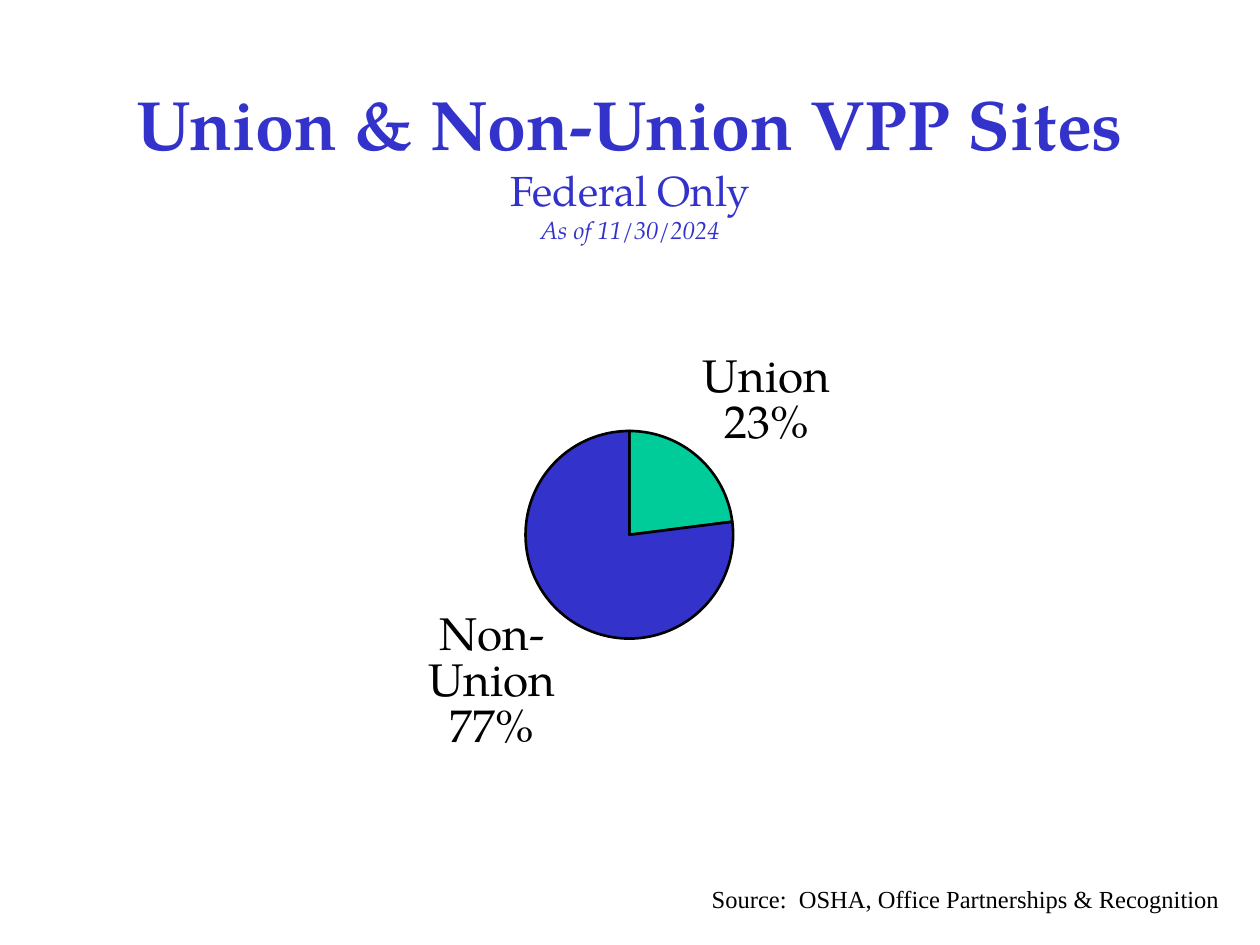
import copy

import pptx
import pptx.chart.data
import pptx.dml.color
import pptx.enum.chart
import pptx.enum.text
import pptx.util

Inches = pptx.util.Inches
Pt = pptx.util.Pt
SERIF = "TeX Gyre Pagella"
BLUE, GREEN, BLACK = "3333CC", "00CC99", "000000"


def color(code):
    return pptx.dml.color.RGBColor.from_string(code)


def style(font, size, name=SERIF, code=BLACK, bold=False, italic=False):
    font.size, font.name = Pt(size), name
    font.bold, font.italic = bold, italic
    font.color.rgb = color(code)


def write(para, text, end=False, **form):
    """Add a run, and a line break of the same format if end is set."""
    run = para.add_run()
    run.text = text
    style(run.font, **form)
    if end:
        para.add_line_break()
        para._p[-1].append(copy.deepcopy(run._r.rPr))


def add_title(slide):
    title = slide.shapes.title
    title.left, title.top = Inches(0.75), Inches(0.58)
    title.width, title.height = Inches(8.5), Inches(1.42)
    frame = title.text_frame
    frame.auto_size = pptx.enum.text.MSO_AUTO_SIZE.NONE
    frame.vertical_anchor = pptx.enum.text.MSO_ANCHOR.MIDDLE
    para = frame.paragraphs[0]
    para.alignment = pptx.enum.text.PP_ALIGN.CENTER
    write(para, "Union & Non-Union VPP Sites", end=True, size=40, code=BLUE, bold=True)
    write(para, "Federal Only", end=True, size=24, code=BLUE)
    write(para, "As of 11/30/2024", size=14, code=BLUE, italic=True)


def place_plot(chart, **box):
    """Fix the inner plot area as fractions of the chart."""
    area = chart._chartSpace.chart.plotArea
    for old in area.xpath("c:layout"):
        area.remove(old)
    parts = "".join(f'<c:{key} val="{val}"/>' for key, val in box.items())
    area.insert(0, pptx.oxml.parse_xml(
        '<c:layout xmlns:c="http://schemas.openxmlformats.org/drawingml/2006/chart">'
        '<c:manualLayout><c:layoutTarget val="inner"/>'
        '<c:xMode val="edge"/><c:yMode val="edge"/>'
        f"{parts}</c:manualLayout></c:layout>"))


def add_pie(slide):
    data = pptx.chart.data.CategoryChartData()
    data.categories = ["Union", "Non-Union"]
    data.add_series("Series 1", [23, 77])
    chart = slide.shapes.add_chart(
        pptx.enum.chart.XL_CHART_TYPE.PIE,
        Inches(1.99), Inches(1.67), Inches(6.01), Inches(5.15), data).chart
    chart.has_legend = chart.has_title = False
    style(chart.font, 26.2)
    place_plot(chart, x=0.31, y=0.34, w=0.38, h=0.32)

    # Slices
    plot = chart.plots[0]
    plot.vary_by_categories = True
    for index, code in enumerate([GREEN, BLUE]):
        form = plot.series[0].points[index].format
        form.fill.solid()
        form.fill.fore_color.rgb = color(code)
        form.line.color.rgb = color(BLACK)
        form.line.width = Pt(1.5)

    # Category and share, one above the other
    plot.has_data_labels = True
    labels = plot.data_labels
    labels.show_category_name = labels.show_percentage = True
    labels.show_value = False
    labels.number_format, labels.number_format_is_linked = "0%", False
    labels.position = pptx.enum.chart.XL_LABEL_POSITION.OUTSIDE_END
    style(labels.font, 26.2)
    gap = pptx.oxml.parse_xml(
        '<c:separator xmlns:c="http://schemas.openxmlformats.org/drawingml/2006/chart">'
        "\n</c:separator>")
    labels._element.xpath("c:showBubbleSize")[0].addnext(gap)


def add_source(slide):
    box = slide.shapes.add_textbox(Inches(5.55), Inches(6.83), Inches(4.31), Inches(0.5))
    frame = box.text_frame
    frame.word_wrap = False
    frame.auto_size = pptx.enum.text.MSO_AUTO_SIZE.SHAPE_TO_FIT_TEXT
    para = frame.paragraphs[0]
    write(para, "Source:  OSHA, Office Partnerships & Recognition",
          size=14, name="Times New Roman")
    write(para, " ", size=24, name="Times New Roman")


def main():
    deck = pptx.Presentation()
    deck.slide_width, deck.slide_height = Inches(10), Inches(7.5)
    slide = deck.slides.add_slide(deck.slide_layouts[5])
    add_title(slide)
    add_pie(slide)
    add_source(slide)
    deck.save("out.pptx")


if __name__ == "__main__":
    main()
